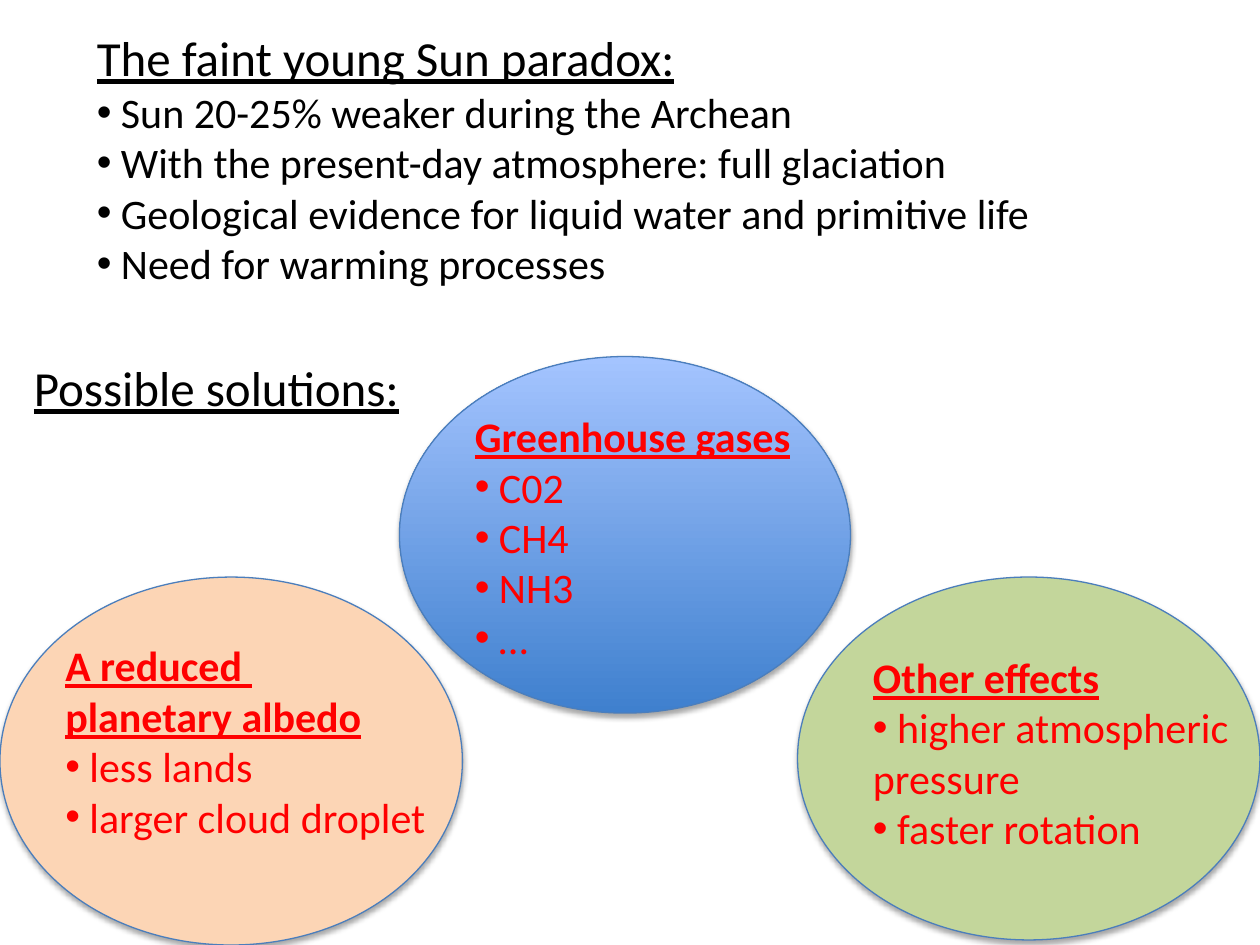
from dataclasses import dataclass

import pptx
import pptx.dml.color
import pptx.enum.shapes
import pptx.enum.text
import pptx.oxml
import pptx.oxml.ns
import pptx.shapes.autoshape
import pptx.slide
import pptx.util

Inches = pptx.util.Inches
Pt = pptx.util.Pt
RGBColor = pptx.dml.color.RGBColor

BLACK = RGBColor(0x00, 0x00, 0x00)
RED = RGBColor(0xFF, 0x00, 0x00)
OUTLINE = RGBColor(0x4B, 0x7E, 0xBC)
DEEP_BLUE = RGBColor(0x3F, 0x80, 0xCE)
PALE_BLUE = RGBColor(0xA4, 0xC4, 0xFF)
PEACH = RGBColor(0xFC, 0xD5, 0xB5)
GREEN = RGBColor(0xC3, 0xD6, 0x9B)
FONT = "Calibri"
BULLET_SIZE = 24


@dataclass(frozen=True)
class Box:
    left: float
    top: float
    width: float
    height: float

    def lengths(self) -> tuple:
        return tuple(Inches(n) for n in (self.left, self.top, self.width, self.height))


@dataclass(frozen=True)
class Bubble:
    box: Box
    colors: tuple[RGBColor, ...]


@dataclass(frozen=True)
class TextBlock:
    box: Box
    headings: tuple[str, ...]
    bullets: tuple[str, ...] = ()
    heading_size: int = 28
    color: RGBColor = BLACK
    bold: bool = False


BUBBLES = (
    Bubble(Box(3.17, 2.83, 3.58, 2.83), (DEEP_BLUE, PALE_BLUE)),
    Bubble(Box(0, 4.58, 3.67, 2.92), (PEACH,)),
    Bubble(Box(6.33, 4.58, 3.67, 2.88), (GREEN,)),
)

TEXT_BLOCKS = (
    TextBlock(
        Box(0.67, 0.17, 8.58, 2.19),
        ("The faint young Sun paradox:",),
        (
            "Sun 20-25% weaker during the Archean",
            "With the present-day atmosphere: full glaciation",
            "Geological evidence for liquid water and primitive life",
            "Need for warming processes",
        ),
    ),
    TextBlock(Box(0.17, 2.79, 8.58, 1.04), ("Possible solutions:",)),
    TextBlock(
        Box(3.67, 3.21, 2.83, 2.12),
        ("Greenhouse gases",),
        ("C02", "CH4", "NH3", "…"),
        24, RED, True,
    ),
    TextBlock(
        Box(0.42, 5.03, 3.42, 1.72),
        ("A reduced ", "planetary albedo"),
        ("less lands", "larger cloud droplet"),
        24, RED, True,
    ),
    TextBlock(
        Box(6.83, 5.12, 3.17, 1.72),
        ("Other effects",),
        ("higher atmospheric pressure", "faster rotation"),
        24, RED, True,
    ),
)


def add_shadow(shape: pptx.shapes.autoshape.Shape) -> None:
    """Give the shape a soft shadow that falls straight down."""
    shape.shadow.inherit = False
    effects = shape._element.spPr.find(pptx.oxml.ns.qn("a:effectLst"))
    effects.append(pptx.oxml.parse_xml(
        f'<a:outerShdw {pptx.oxml.ns.nsdecls("a")} blurRad="{Pt(3.1)}" dist="{Pt(1.8)}" '
        'dir="5400000" rotWithShape="0"><a:srgbClr val="000000">'
        '<a:alpha val="35000"/></a:srgbClr></a:outerShdw>'
    ))


def add_bubble(slide: pptx.slide.Slide, bubble: Bubble) -> None:
    """Draw an outlined ellipse with a solid or gradient fill."""
    shape = slide.shapes.add_shape(
        pptx.enum.shapes.MSO_SHAPE.OVAL, *bubble.box.lengths()
    )
    if len(bubble.colors) == 1:
        shape.fill.solid()
        shape.fill.fore_color.rgb = bubble.colors[0]
    else:
        shape.fill.gradient()
        shape.fill.gradient_angle = 90
        for stop, color in zip(shape.fill.gradient_stops, bubble.colors):
            stop.color.rgb = color
    shape.line.color.rgb = OUTLINE
    shape.line.width = Pt(0.75)
    add_shadow(shape)


def add_bullet(paragraph) -> None:
    """Put a round bullet in front of the paragraph."""
    properties = paragraph._p.get_or_add_pPr()
    for tag, name, value in (("buFont", "typeface", "Arial"), ("buChar", "char", "•")):
        properties.append(pptx.oxml.parse_xml(
            f'<a:{tag} {pptx.oxml.ns.nsdecls("a")} {name}="{value}"/>'
        ))


def add_text_block(slide: pptx.slide.Slide, block: TextBlock) -> None:
    """Write underlined headings followed by bulleted lines."""
    frame = slide.shapes.add_textbox(*block.box.lengths()).text_frame
    frame.word_wrap = True
    frame.auto_size = pptx.enum.text.MSO_AUTO_SIZE.SHAPE_TO_FIT_TEXT
    lines = [(text, True) for text in block.headings]
    lines += [(f" {text}", False) for text in block.bullets]
    for index, (text, is_heading) in enumerate(lines):
        paragraph = frame.add_paragraph() if index else frame.paragraphs[0]
        if not is_heading:
            add_bullet(paragraph)
        run = paragraph.add_run()
        run.text = text
        run.font.name = FONT
        run.font.size = Pt(block.heading_size if is_heading else BULLET_SIZE)
        run.font.color.rgb = block.color
        run.font.bold = block.bold and is_heading
        run.font.underline = is_heading


def main() -> None:
    """Build the slide on the faint young Sun paradox and save it."""
    presentation = pptx.Presentation()
    presentation.slide_width = Inches(10)
    presentation.slide_height = Inches(7.5)
    slide = presentation.slides.add_slide(presentation.slide_layouts[6])
    for bubble in BUBBLES:
        add_bubble(slide, bubble)
    for block in TEXT_BLOCKS:
        add_text_block(slide, block)
    presentation.save("out.pptx")


if __name__ == "__main__":
    main()
